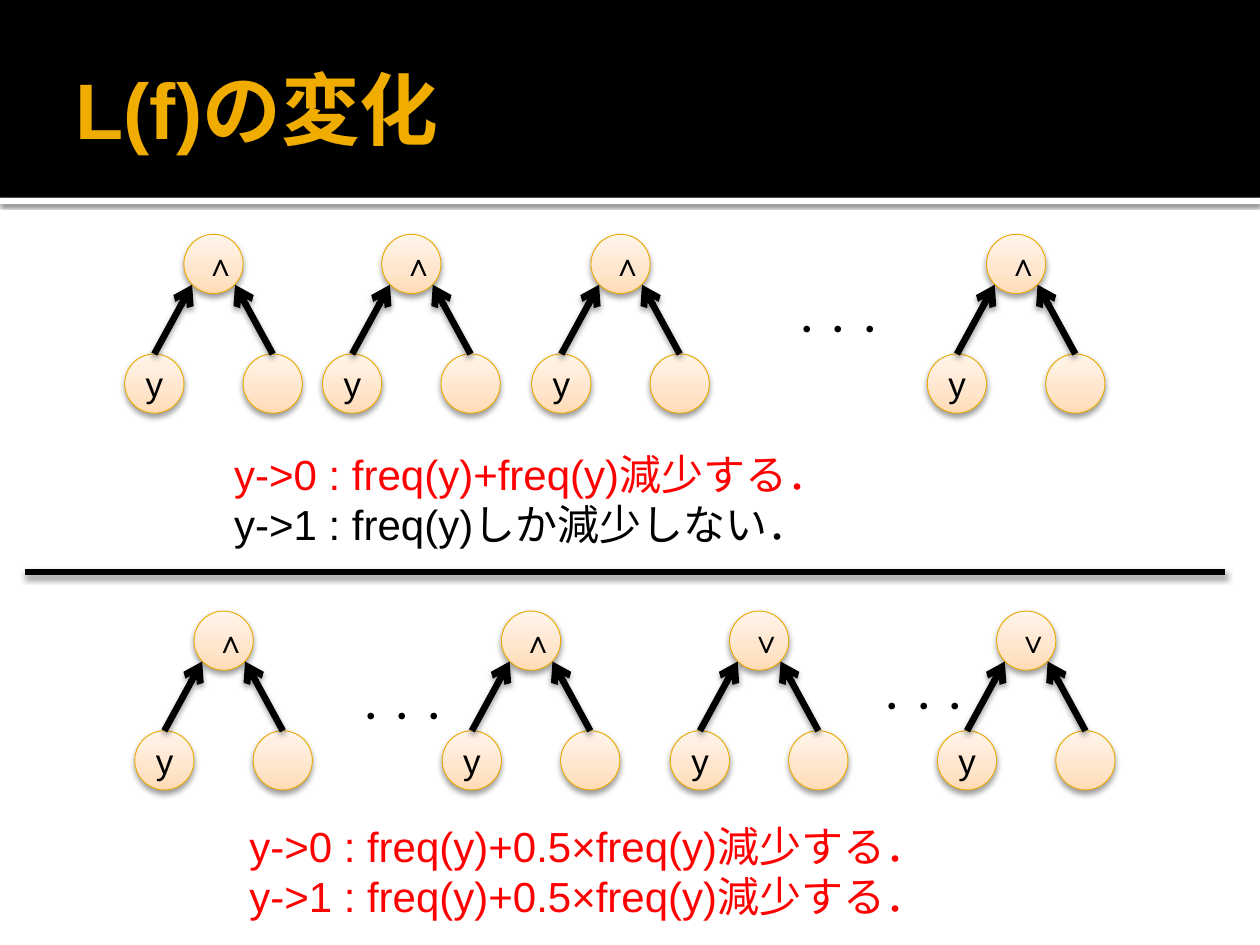
from copy import deepcopy

from lxml.etree import SubElement
from pptx import Presentation
from pptx.dml.color import RGBColor
from pptx.enum.shapes import MSO_CONNECTOR, MSO_SHAPE
from pptx.enum.text import MSO_ANCHOR, MSO_AUTO_SIZE, PP_ALIGN
from pptx.oxml.ns import qn
from pptx.util import Inches, Pt

COLORS = {
    "black": "000000", "white": "FFFFFF", "gold": "F0AD00", "outline": "EBA900",
    "red": "FF0000", "deep": "FFDBB5", "middle": "FFE5CB", "pale": "FFF5EB",
}
NODE = 0.47
NODE_STOPS = [(0, "deep"), (0.35, "middle"), (1, "pale")]


def add_shadow(shape, opacity=38, blur=3.5, distance=2):
    effects = SubElement(shape._element.spPr, qn("a:effectLst"))
    shadow = SubElement(effects, qn("a:outerShdw"), blurRad=str(Pt(blur)),
                        dist=str(Pt(distance)), dir="5400000", rotWithShape="0")
    color = SubElement(shadow, qn("a:srgbClr"), val=COLORS["black"])
    SubElement(color, qn("a:alpha"), val=str(opacity * 1000))


def add_span(para, text, size, color):
    span = para.add_run()
    span.text = text
    span.font.name = "Arial"
    span.font.size = Pt(size)
    span.font.color.rgb = RGBColor.from_string(COLORS[color])
    return span


deck = Presentation()
deck.slide_width, deck.slide_height = Inches(10), Inches(7.5)
page = deck.slides.add_slide(deck.slide_layouts[5])
shapes = page.shapes

for top, height, color in [(1.57, 0.05, "white"), (0, 1.57, "black")]:
    band = shapes.add_shape(MSO_SHAPE.RECTANGLE, 0, Inches(top), Inches(10), Inches(height))
    band.fill.solid()
    band.fill.fore_color.rgb = RGBColor.from_string(COLORS[color])
    band.line.fill.background()
    if color == "white":
        add_shadow(band, 60, 2.5, 0.8)
    else:
        band.shadow.inherit = False

title = shapes.title
shapes._spTree.append(title._element)
title.left, title.top, title.width, title.height = map(Inches, (0.5, 0.17, 9, 1.37))
frame = title.text_frame
frame.vertical_anchor = MSO_ANCHOR.MIDDLE
frame.margin_left = Inches(0.1)
frame.margin_right = frame.margin_top = frame.margin_bottom = Inches(0.05)
frame.paragraphs[0].alignment = PP_ALIGN.LEFT
add_span(frame.paragraphs[0], "L(f)の変化", 45, "gold").font.bold = True

trees = [(left, 1.86, "∧") for left in (1.46, 3.03, 4.69, 7.83)]
trees += [(1.54, 4.85, "∧"), (3.98, 4.85, "∧"), (5.79, 4.85, "∨"), (7.91, 4.85, "∨")]
for left, top, gate in trees:
    center, leaf_top = left + NODE / 2, top + 0.95
    nodes = [(left, top, gate, 18), (left - 0.47, leaf_top, "y", 20),
             (left + 0.47, leaf_top, "", 20)]
    for node_left, node_top, label, size in nodes:
        node = shapes.add_shape(MSO_SHAPE.OVAL, Inches(node_left), Inches(node_top),
                                Inches(NODE), Inches(NODE))
        node.fill.gradient()
        node.fill.gradient_angle = 90
        stop_list = node._element.spPr.find(".//" + qn("a:gsLst"))
        stop_list.insert(1, deepcopy(stop_list[0]))
        for stop, (position, color) in zip(node.fill.gradient_stops, NODE_STOPS):
            stop.position = position
            stop.color.rgb = RGBColor.from_string(COLORS[color])
        node.line.color.rgb = RGBColor.from_string(COLORS["outline"])
        node.line.width = Pt(0.5)
        add_shadow(node)
        if label:
            node.text_frame.vertical_anchor = MSO_ANCHOR.MIDDLE
            para = node.text_frame.paragraphs[0]
            para.alignment = PP_ALIGN.CENTER
            add_span(para, label, size, "black")

    for side in (-1, 1):
        edge = shapes.add_connector(
            MSO_CONNECTOR.STRAIGHT, Inches(center + side * 0.47), Inches(leaf_top),
            Inches(center + side * 0.17), Inches(top + 0.4))
        edge.line.color.rgb = RGBColor.from_string(COLORS["black"])
        edge.line.width = Pt(3.78)
        SubElement(edge._element.spPr.find(qn("a:ln")), qn("a:tailEnd"), type="arrow")
        add_shadow(edge)

divider = shapes.add_connector(MSO_CONNECTOR.STRAIGHT, Inches(0.2), Inches(4.54),
                               Inches(9.72), Inches(4.54))
divider.line.color.rgb = RGBColor.from_string(COLORS["black"])
divider.line.width = Pt(3.78)
add_shadow(divider)

for left, top in [(6.18, 2.41), (6.86, 5.4), (2.72, 5.48)]:
    box = shapes.add_textbox(Inches(left), Inches(top), Inches(0.96), Inches(0.4))
    box.text_frame.word_wrap = False
    box.text_frame.auto_size = MSO_AUTO_SIZE.SHAPE_TO_FIT_TEXT
    add_span(box.text_frame.paragraphs[0], "・・・", 18, "black")

notes = [
    (1.76, 3.51, [("y->0 : freq(y)+freq(y)減少する．", "red"),
                  ("y->1 : freq(y)しか減少しない．", "black")]),
    (1.88, 6.46, [("y->0 : freq(y)+0.5×freq(y)減少する．", "red"),
                  ("y->1 : freq(y)+0.5×freq(y)減少する．", "red")]),
]
for left, top, lines in notes:
    box = shapes.add_textbox(Inches(left), Inches(top), Inches(7.02), Inches(0.91))
    frame = box.text_frame
    frame.word_wrap = True
    frame.auto_size = MSO_AUTO_SIZE.SHAPE_TO_FIT_TEXT
    for index, (text, color) in enumerate(lines):
        para = frame.add_paragraph() if index else frame.paragraphs[0]
        add_span(para, text, 24, color)

deck.save("out.pptx")
